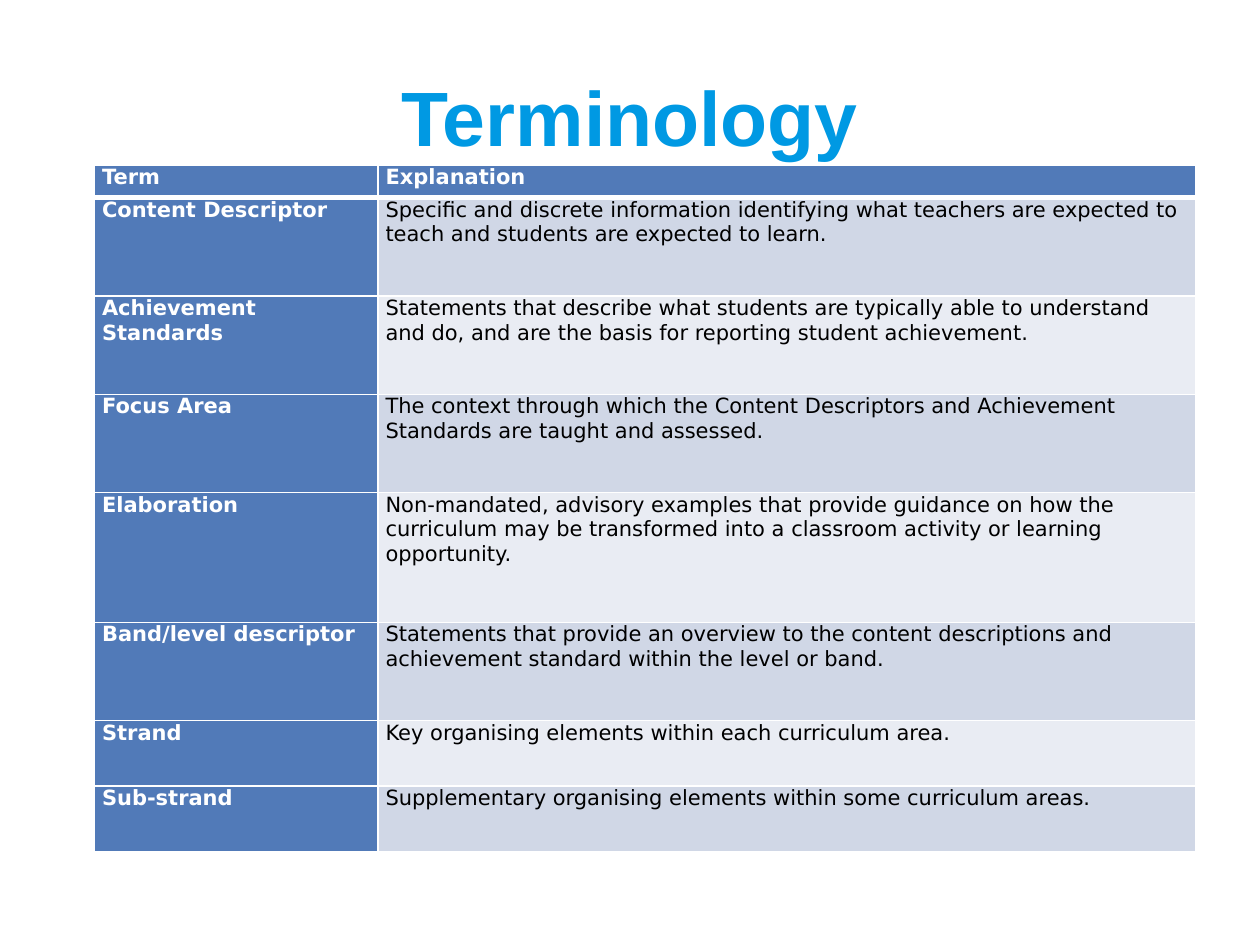
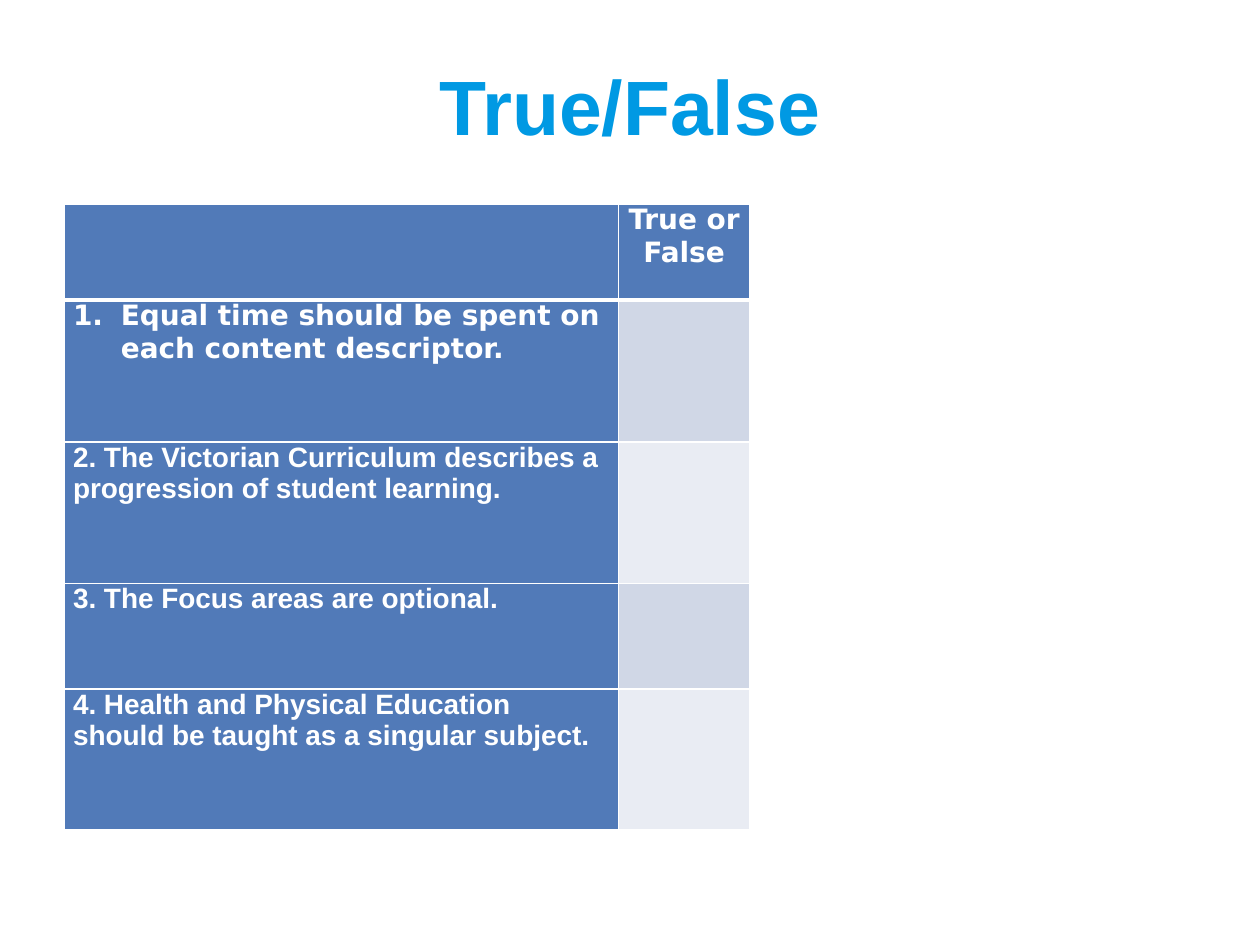
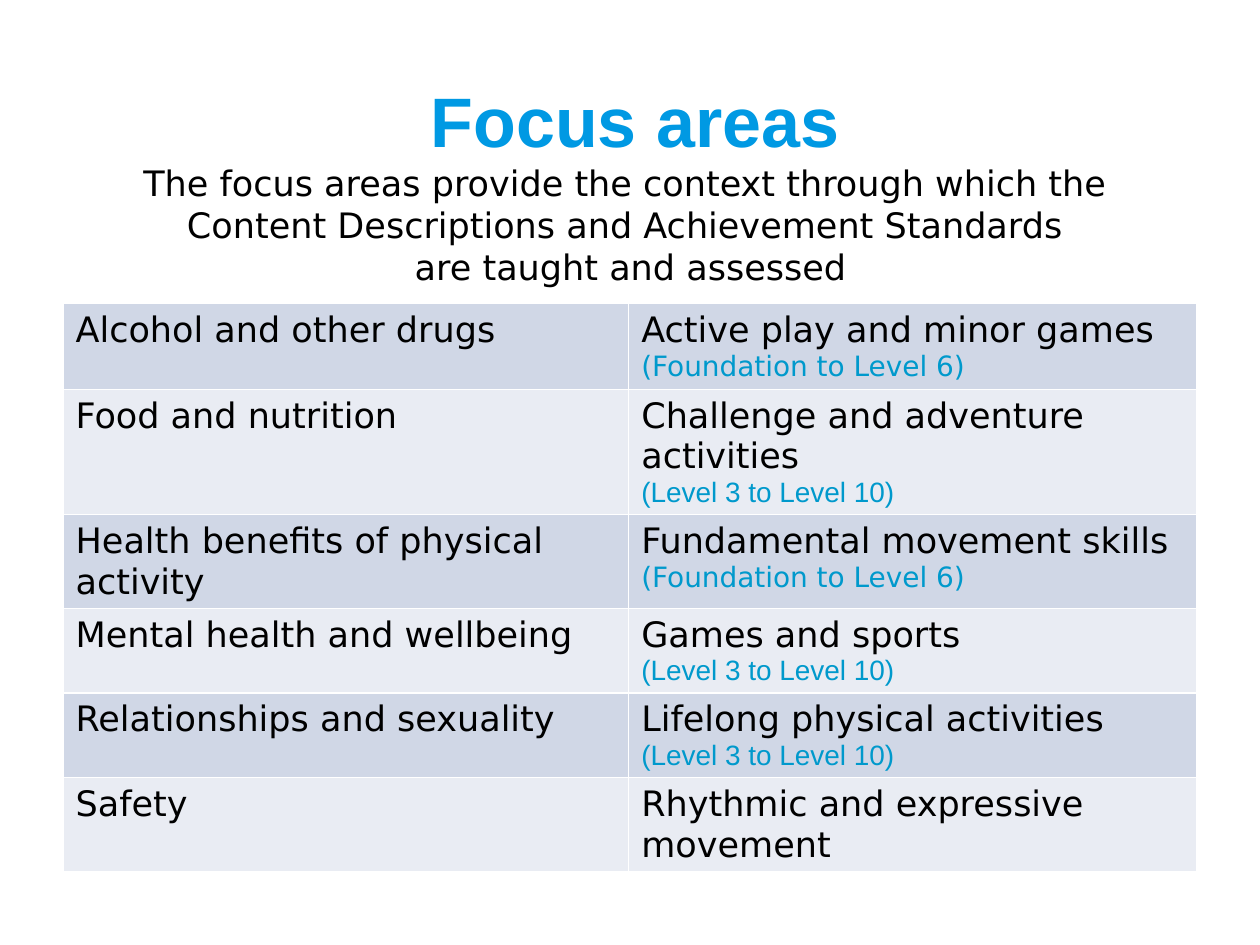
from dataclasses import dataclass
from typing import Any, Optional

import lxml.etree
import pptx
import pptx.dml.color
import pptx.enum.text
import pptx.oxml.ns
import pptx.util

Inches = pptx.util.Inches
Align = pptx.enum.text.PP_ALIGN


@dataclass(frozen=True)
class Theme:
    title_color: str = "0099E3"
    level_color: str = "0099CC"
    dark: str = "000000"
    light: str = "FFFFFF"
    heading_fill: str = "517AB8"
    bands: tuple[str, str] = ("D0D7E6", "E9ECF3")
    heading_font: str = "Arial"
    body_font: str = "DejaVu Sans"
    title_size: int = 44
    small_title_size: int = 40
    body_size: int = 20
    statement_size: int = 16
    term_size: int = 12
    rule: int = 1
    header_rule: int = 3


THEME = Theme()


@dataclass(frozen=True)
class Box:
    left: float
    top: float
    width: float
    height: float

    def lengths(self) -> tuple[int, ...]:
        return tuple(Inches(value) for value in (self.left, self.top, self.width, self.height))


@dataclass(frozen=True)
class Span:
    """One paragraph of evenly formatted text."""
    text: str
    size: int
    color: str = THEME.dark
    bold: bool = False
    font: str = THEME.body_font
    align: Optional[Any] = None
    number_indent: float = 0


@dataclass(frozen=True)
class Cell:
    fill: str
    spans: tuple[Span, ...] = ()


@dataclass(frozen=True)
class Grid:
    left: float
    top: float
    columns: tuple[float, ...]
    rows: tuple[float, ...]
    side_margin: float
    end_margin: float = 0
    has_header: bool = True


def set_all(target: Any, values: dict[str, Any]) -> None:
    for name, value in values.items():
        setattr(target, name, value)


def write_spans(frame: Any, spans: tuple[Span, ...]) -> None:
    for index, span in enumerate(spans):
        para = frame.add_paragraph() if index else frame.paragraphs[0]
        if span.number_indent:
            properties = para._p.get_or_add_pPr()
            properties.set("marL", str(Inches(span.number_indent)))
            properties.set("indent", str(-Inches(span.number_indent)))
            lxml.etree.SubElement(
                properties, pptx.oxml.ns.qn("a:buAutoNum"), type="arabicPeriod")
        if span.align is not None:
            para.alignment = span.align
        run = para.add_run()
        run.text = span.text
        set_all(run.font, {"size": pptx.util.Pt(span.size), "bold": span.bold, "name": span.font})
        run.font.color.rgb = pptx.dml.color.RGBColor.from_string(span.color)


def add_titled_page(deck: Any, title: str, box: Box, size: int = THEME.title_size) -> Any:
    page = deck.slides.add_slide(deck.slide_layouts[5])
    holder = page.shapes.title
    holder.left, holder.top, holder.width, holder.height = box.lengths()
    set_all(holder.text_frame, {
        "auto_size": pptx.enum.text.MSO_AUTO_SIZE.NONE,
        "vertical_anchor": pptx.enum.text.MSO_ANCHOR.MIDDLE,
        "word_wrap": True,
    })
    write_spans(holder.text_frame, (
        Span(title, size, THEME.title_color, True, THEME.heading_font, Align.CENTER),))
    return page


def add_borders(cell: Any, top: int, bottom: int) -> None:
    properties = cell._tc.get_or_add_tcPr()
    widths = {"lnL": THEME.rule, "lnR": THEME.rule, "lnT": top, "lnB": bottom}
    for side, width in widths.items():
        line = lxml.etree.SubElement(
            properties, pptx.oxml.ns.qn(f"a:{side}"), w=str(pptx.util.Pt(width)))
        solid = lxml.etree.SubElement(line, pptx.oxml.ns.qn("a:solidFill"))
        lxml.etree.SubElement(solid, pptx.oxml.ns.qn("a:srgbClr"), val=THEME.light)


def add_grid(page: Any, grid: Grid, content: list[tuple[Cell, ...]]) -> None:
    box = Box(grid.left, grid.top, sum(grid.columns), sum(grid.rows))
    table = page.shapes.add_table(len(grid.rows), len(grid.columns), *box.lengths()).table
    set_all(table, {"first_row": False, "horz_banding": False})
    for column, width in zip(table.columns, grid.columns):
        column.width = Inches(width)
    for row, height in zip(table.rows, grid.rows):
        row.height = Inches(height)
    side, end = Inches(grid.side_margin), Inches(grid.end_margin)
    margins = {"margin_left": side, "margin_right": side, "margin_top": end, "margin_bottom": end}
    header_rule = THEME.header_rule if grid.has_header else THEME.rule
    for row_index, entries in enumerate(content):
        for column_index, entry in enumerate(entries):
            cell = table.cell(row_index, column_index)
            add_borders(cell,
                        top=header_rule if row_index == 1 else THEME.rule,
                        bottom=header_rule if row_index == 0 else THEME.rule)
            cell.fill.solid()
            cell.fill.fore_color.rgb = pptx.dml.color.RGBColor.from_string(entry.fill)
            if entry.spans:
                set_all(cell, margins)
                write_spans(cell.text_frame, entry.spans)


def heading_cell(text: str, size: int, **style: Any) -> Cell:
    return Cell(THEME.heading_fill, (Span(text, size, THEME.light, True, **style),))


def band_fill(index: int) -> str:
    return THEME.bands[index % len(THEME.bands)]


TERMS = [
    ("Content Descriptor", "Specific and discrete information identifying what teachers are "
     "expected to teach and students are expected to learn."),
    ("Achievement Standards", "Statements that describe what students are typically able to "
     "understand and do, and are the basis for reporting student achievement."),
    ("Focus Area", "The context through which the Content Descriptors and Achievement Standards "
     "are taught and assessed."),
    ("Elaboration", "Non-mandated, advisory examples that provide guidance on how the curriculum "
     "may be transformed into a classroom activity or learning opportunity."),
    ("Band/level descriptor", "Statements that provide an overview to the content descriptions "
     "and achievement standard within the level or band."),
    ("Strand", "Key organising elements within each curriculum area."),
    ("Sub-strand", "Supplementary organising elements within some curriculum areas."),
]

STATEMENTS = [
    "2. The Victorian Curriculum describes a progression of student learning.",
    "3. The Focus areas are optional.",
    "4. Health and Physical Education should be taught as a singular subject.",
]

EARLY_LEVELS = Span("(Foundation to Level 6)", THEME.statement_size, THEME.level_color)
LATER_LEVELS = Span("(Level 3 to Level 10)", THEME.statement_size, THEME.level_color,
                    font=THEME.heading_font)
FOCUS_AREAS = [
    ("Alcohol and other drugs", "Active play and minor games", EARLY_LEVELS),
    ("Food and nutrition", "Challenge and adventure activities", LATER_LEVELS),
    ("Health benefits of physical activity", "Fundamental movement skills", EARLY_LEVELS),
    ("Mental health and wellbeing", "Games and sports", LATER_LEVELS),
    ("Relationships and sexuality", "Lifelong physical activities", LATER_LEVELS),
    ("Safety", "Rhythmic and expressive movement", None),
]

FOCUS_SUMMARY = [
    "The focus areas provide the context through which the ",
    "Content Descriptions and Achievement Standards ",
    "are taught and assessed",
]


def add_terminology(deck: Any) -> None:
    page = add_titled_page(deck, "Terminology", Box(0.75, 0.52, 8.5, 0.8))
    size = THEME.term_size
    content = [(heading_cell("Term", size), heading_cell("Explanation", size))]
    for index, (term, explanation) in enumerate(TERMS):
        content.append((heading_cell(term, size),
                        Cell(band_fill(index), (Span(explanation, size),))))
    rows = (0.26, 0.78, 0.78, 0.78, 1.03, 0.78, 0.52, 0.52)
    add_grid(page, Grid(0.75, 1.31, (2.25, 6.49), rows, side_margin=0.06), content)


def add_true_false(deck: Any) -> None:
    page = add_titled_page(deck, "True/False", Box(0.75, 0.21, 8.5, 1.25))
    size = THEME.statement_size
    questions = [heading_cell("Equal time should be spent on each content descriptor.", size,
                              number_indent=0.38)]
    questions += [heading_cell(text, size, font=THEME.heading_font) for text in STATEMENTS]
    content = [(Cell(THEME.heading_fill),
                heading_cell("True or False", size, align=Align.CENTER))]
    content += [(question, Cell(band_fill(index))) for index, question in enumerate(questions)]
    rows = (0.76, 1.13, 1.12, 0.84, 1.12)
    add_grid(page, Grid(0.51, 1.62, (4.4, 1.04), rows, side_margin=0.07), content)


def add_focus_areas(deck: Any) -> None:
    page = add_titled_page(deck, "Focus areas", Box(0.79, 0.5, 8.5, 0.89),
                           THEME.small_title_size)
    content = []
    for index, (health, movement, levels) in enumerate(FOCUS_AREAS):
        spans = (Span(movement, THEME.body_size),) + ((levels,) if levels else ())
        content.append((Cell(band_fill(index), (Span(health, THEME.body_size),)),
                        Cell(band_fill(index), spans)))
    grid = Grid(0.5, 2.41, (4.49, 4.51), (0.58,) * len(FOCUS_AREAS),
                side_margin=0.1, end_margin=0.05, has_header=False)
    add_grid(page, grid, content)

    summary = page.shapes.add_textbox(*Box(0.32, 1.23, 9.37, 1.11).lengths())
    set_all(summary.text_frame, {
        "word_wrap": True, "auto_size": pptx.enum.text.MSO_AUTO_SIZE.SHAPE_TO_FIT_TEXT})
    write_spans(summary.text_frame, tuple(
        Span(line, THEME.body_size, align=Align.CENTER) for line in FOCUS_SUMMARY))


def main() -> None:
    deck = pptx.Presentation()
    set_all(deck, {"slide_width": Inches(10), "slide_height": Inches(7.5)})
    for add_page in (add_terminology, add_true_false, add_focus_areas):
        add_page(deck)
    deck.save("out.pptx")


if __name__ == "__main__":
    main()
